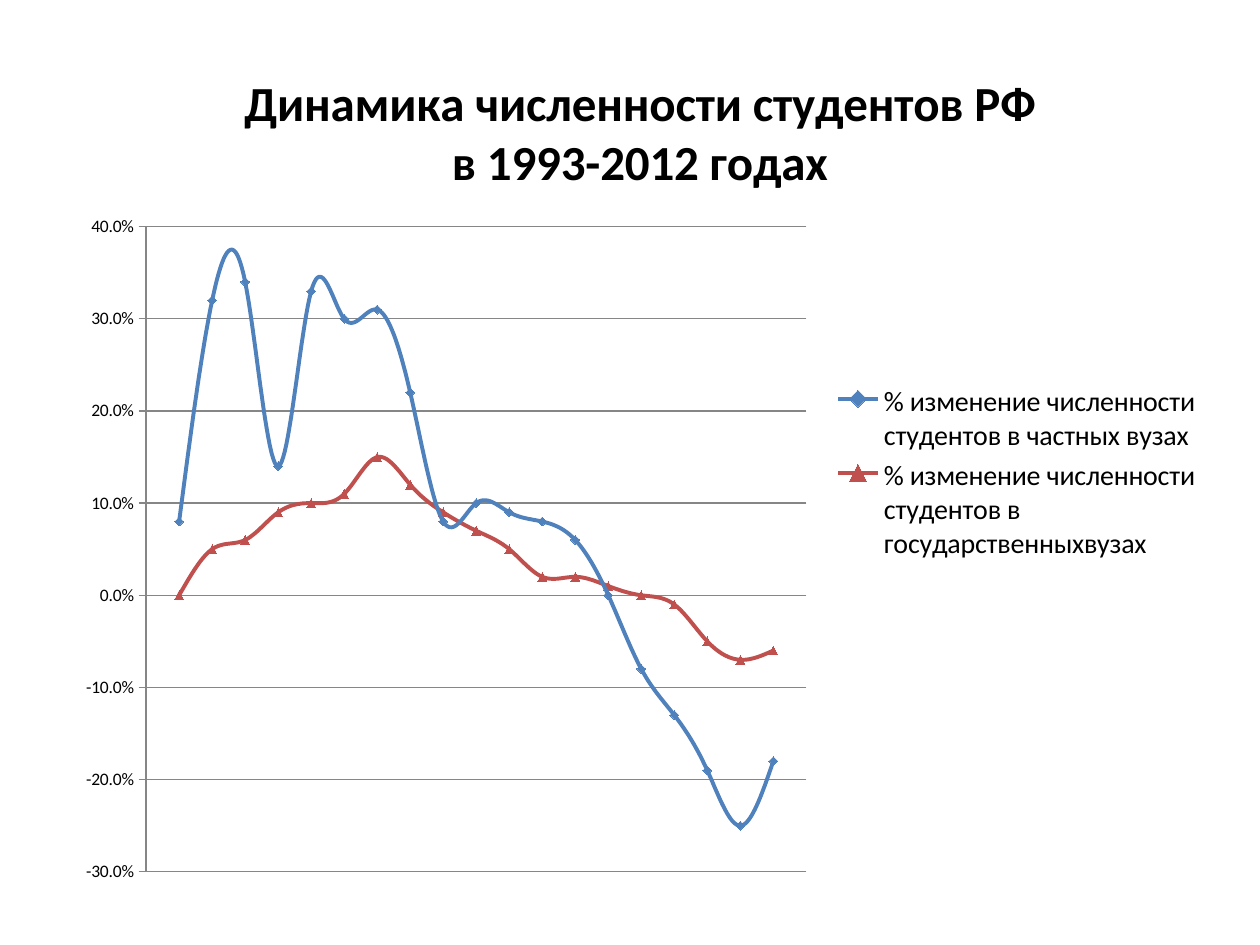
from lxml import etree
from pptx import Presentation
from pptx.chart.data import XyChartData
from pptx.dml.color import RGBColor
from pptx.enum.chart import XL_CHART_TYPE, XL_LEGEND_POSITION, XL_MARKER_STYLE, XL_TICK_MARK
from pptx.oxml.ns import qn
from pptx.util import Inches, Pt

SMOOTH_SCATTER = XL_CHART_TYPE.XY_SCATTER_SMOOTH
RIGHT = XL_LEGEND_POSITION.RIGHT
DIAMOND, TRIANGLE = XL_MARKER_STYLE.DIAMOND, XL_MARKER_STYLE.TRIANGLE
OUTSIDE, NO_TICK = XL_TICK_MARK.OUTSIDE, XL_TICK_MARK.NONE

COLORS = {"text": "000000", "grid": "868686", "private": "4F81BD", "state": "C0504D"}
FONT = "Calibri"
CHART_WIDTH, CHART_HEIGHT = 9.15, 6.77
TITLE = "Динамика численности студентов РФ\nв 1993-2012 годах"
SERIES = [
    ("% изменение численности студентов в частных вузах", "private", DIAMOND,
     [0.08, 0.32, 0.34, 0.14, 0.33, 0.3, 0.31, 0.22, 0.08, 0.1, 0.09, 0.08, 0.06,
      0, -0.08, -0.13, -0.19, -0.25, -0.18]),
    ("% изменение численности студентов в государственныхвузах", "state", TRIANGLE,
     [0, 0.05, 0.06, 0.09, 0.1, 0.11, 0.15, 0.12, 0.09, 0.07, 0.05, 0.02, 0.02,
      0.01, 0, -0.01, -0.05, -0.07, -0.06]),
]


def color(name):
    """Return the named palette colour."""
    return RGBColor.from_string(COLORS[name])


def set_all(target, values):
    """Set every attribute in a dict of format values."""
    for name, value in values.items():
        setattr(target, name, value)


def format_font(font, size, bold=False):
    """Apply the slide's typeface at one size."""
    set_all(font, {"name": FONT, "size": Pt(size), "bold": bold})
    font.color.rgb = color("text")


def format_line(line, name, width):
    """Give a line its colour and width."""
    line.color.rgb = color(name)
    line.width = Pt(width)


def place_part(chart, tag, **inches):
    """Position a chart part in inches from the chart's corner."""
    part = next(chart.element.iter(qn(tag)))
    for old in part.findall(qn("c:layout")):
        part.remove(old)
    layout = etree.Element(qn("c:layout"))
    manual = etree.SubElement(layout, qn("c:manualLayout"))
    if tag == "c:plotArea":
        etree.SubElement(manual, qn("c:layoutTarget"), val="inner")
    for mode in ("xMode", "yMode"):
        etree.SubElement(manual, qn(f"c:{mode}"), val="edge")
    for name, length in inches.items():
        whole = CHART_WIDTH if name in "xw" else CHART_HEIGHT
        etree.SubElement(manual, qn(f"c:{name}"), val=f"{length / whole:.4f}")
    overlay = part.find(qn("c:overlay"))
    if overlay is None:
        part.insert(0, layout)
    else:
        overlay.addprevious(layout)


def add_student_chart(page):
    """Add the smooth scatter chart with both student series."""
    data = XyChartData(number_format="0.0%")
    for name, _, _, changes in SERIES:
        points = data.add_series(name)
        for position, change in enumerate(changes, 1):
            points.add_data_point(position, change)
    frame = page.shapes.add_chart(
        SMOOTH_SCATTER, Inches(0.5), Inches(0.36),
        Inches(CHART_WIDTH), Inches(CHART_HEIGHT), data)
    chart = frame.chart
    format_font(chart.font, 10)
    chart.plots[0].vary_by_categories = False
    return chart


def format_series(chart):
    """Style the curves and their markers."""
    for series, (_, name, style, _) in zip(chart.plots[0].series, SERIES):
        format_line(series.format.line, name, 2.25)
        set_all(series.marker, {"style": style, "size": 5})
        series.marker.format.fill.solid()
        series.marker.format.fill.fore_color.rgb = color(name)
        format_line(series.marker.format.line, name, 0.75)


def smooth_by_position(chart):
    """Smooth each curve and space its points by their order."""
    for series in chart.element.iter(qn("c:ser")):
        series.remove(series.find(qn("c:xVal")))
        for old in series.findall(qn("c:smooth")):
            series.remove(old)
        smooth = etree.Element(qn("c:smooth"), val="1")
        series.find(qn("c:yVal")).addnext(smooth)


def format_axes(chart):
    """Hide the year axis and style the percentage axis."""
    set_all(chart.category_axis, {
        "visible": False, "has_major_gridlines": False,
        "minimum_scale": 0, "maximum_scale": 20})
    axis = chart.value_axis
    set_all(axis, {
        "minimum_scale": -0.3, "maximum_scale": 0.4, "major_unit": 0.1,
        "has_major_gridlines": True, "major_tick_mark": OUTSIDE,
        "minor_tick_mark": NO_TICK})
    set_all(axis.tick_labels, {"number_format": "0.0%", "number_format_is_linked": False})
    format_font(axis.tick_labels.font, 10)
    format_line(axis.format.line, "grid", 0.75)
    format_line(axis.major_gridlines.format.line, "grid", 0.75)


def add_title(chart):
    """Write the two-line chart title."""
    chart.has_title = True
    frame = chart.chart_title.text_frame
    frame.text = TITLE
    for para in frame.paragraphs:
        for span in para.runs:
            format_font(span.font, 28, bold=True)


def add_legend(chart):
    """Show the legend on the right."""
    chart.has_legend = True
    set_all(chart.legend, {"position": RIGHT, "include_in_layout": False})
    format_font(chart.legend.font, 16)


def main():
    """Build and save the slide."""
    deck = Presentation()
    set_all(deck, {"slide_width": Inches(10), "slide_height": Inches(7.5)})
    page = deck.slides.add_slide(deck.slide_layouts[6])
    chart = add_student_chart(page)
    format_series(chart)
    smooth_by_position(chart)
    format_axes(chart)
    add_title(chart)
    add_legend(chart)
    place_part(chart, "c:title", x=1.41, y=0.19)
    place_part(chart, "c:plotArea", x=0.66, y=1.44, w=5.24, h=5.12)
    place_part(chart, "c:legend", x=6.06, y=2.65, w=3.02, h=1.49)
    deck.save("out.pptx")


if __name__ == "__main__":
    main()
